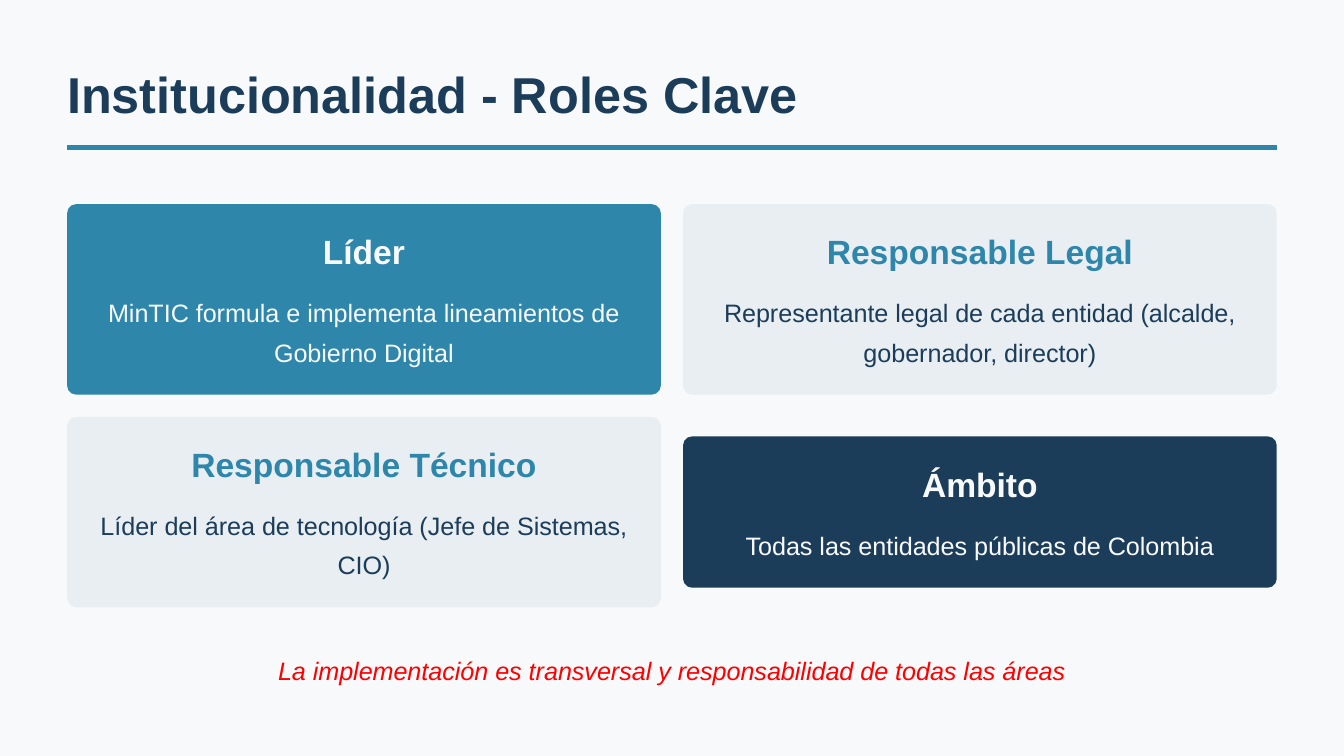
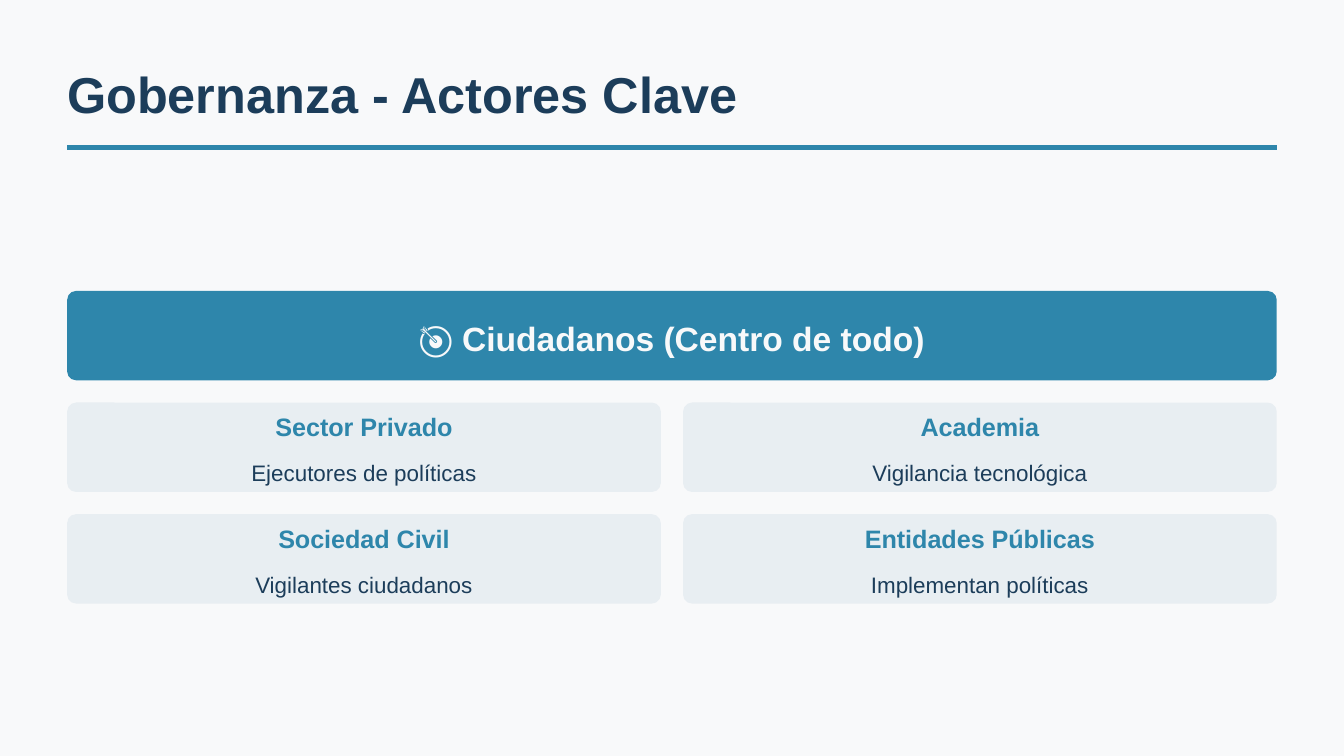
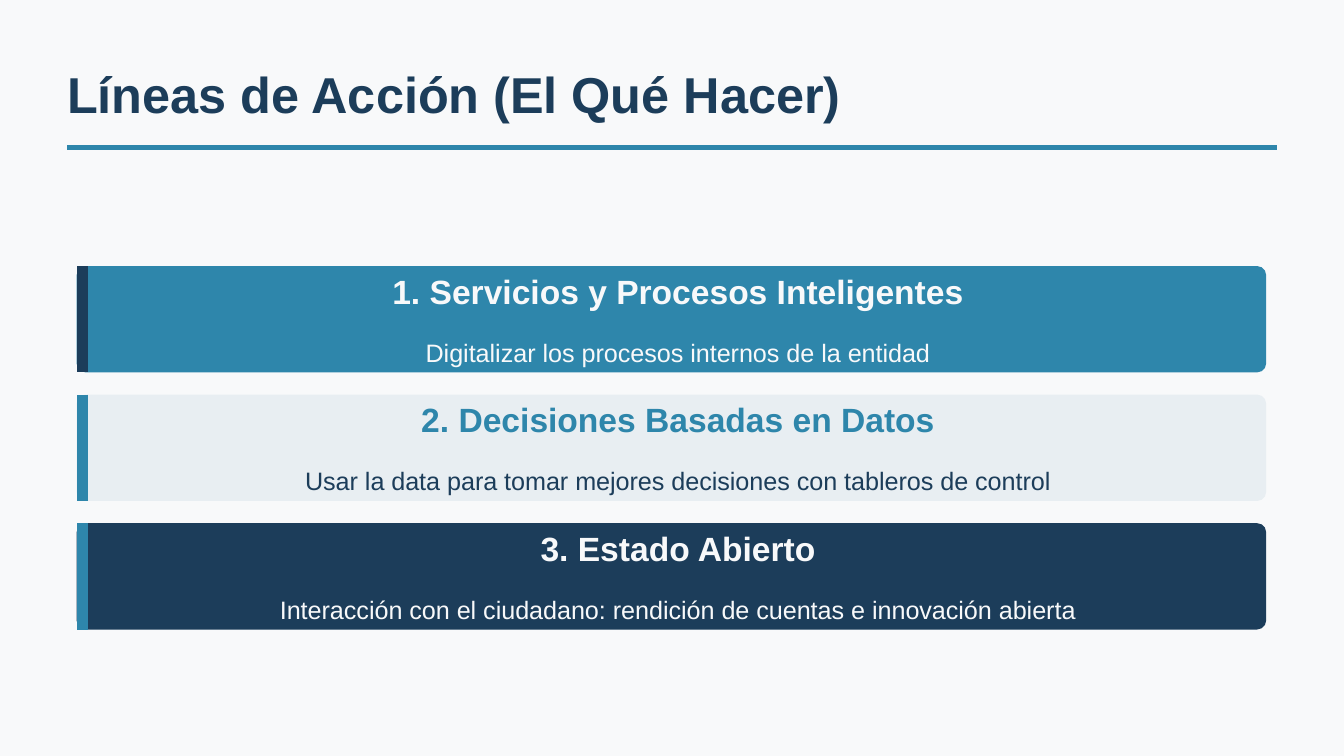
from collections import namedtuple

from lxml.etree import SubElement
from pptx import Presentation
from pptx.dml.color import RGBColor as Rgb
from pptx.enum.shapes import MSO_CONNECTOR as Connector, MSO_SHAPE as Shape
from pptx.enum.text import MSO_ANCHOR as Anchor, PP_ALIGN as Align
from pptx.oxml.ns import qn
from pptx.util import Cm, Pt

COLORS = {"paper": "F8F9FA", "blue": "2E86AB", "navy": "1C3D5A",
          "pale": "E8EEF2", "red": "FF0000"}
# Card fill -> heading colour, body colour
TONES = {"blue": ("paper", "paper"), "pale": ("blue", "navy"),
         "navy": ("paper", "paper")}
FONT = "Arial"

# Lengths in centimetres
SLIDE_W, SLIDE_H = 25.4, 14.29
MARGIN, GAP, RADIUS = 1.27, 0.42, 0.17
CONTENT_W = SLIDE_W - 2 * MARGIN
COLUMN_W = (CONTENT_W - GAP) / 2

Box = namedtuple("Box", "left top width height")
CardStyle = namedtuple(
    "CardStyle", "inset pad head_size head_line head_height head_bottom "
                 "body_size body_line line_height")
ROLE = CardStyle(0.32, 0.43, 18, 24, 1.06, 0.2, 13.5, 21, 0.74)
ACTOR = CardStyle(-0.1, 0, 13.5, 21, 0.84, 0.1, 12, 18, 0.64)
ACTION = ROLE._replace(inset=0, pad=0)


def color(name):
    return Rgb.from_string(COLORS[name])


def to_cm(box):
    return [Cm(length) for length in box]


def add_text(page, box, text, *, size, line, ink, bold=False, italic=False,
             align=Align.CENTER, space=0, top=0, bottom=0):
    frame = page.shapes.add_textbox(*to_cm(box)).text_frame
    frame.word_wrap = True
    frame.vertical_anchor = Anchor.TOP
    frame.margin_left = frame.margin_right = 0
    frame.margin_top, frame.margin_bottom = Cm(top), Cm(bottom)
    para = frame.paragraphs[0]
    para.alignment = align
    para.line_spacing = Pt(line)
    if space:
        para.space_before = para.space_after = Pt(space)
    span = para.add_run()
    span.text = text
    font = span.font
    font.name, font.size = FONT, Pt(size)
    font.bold, font.italic = bold, italic
    font.color.rgb = color(ink)


def add_line(page, start, end, ink, weight):
    line = page.shapes.add_connector(
        Connector.STRAIGHT, *to_cm(start), *to_cm(end))
    line.line.color.rgb = color(ink)
    line.line.width = Pt(weight)
    SubElement(line._element.spPr, qn("a:effectLst"))


def add_panel(page, box, fill):
    panel = page.shapes.add_shape(Shape.ROUNDED_RECTANGLE, *to_cm(box))
    panel.adjustments[0] = RADIUS / box.height
    panel.shadow.inherit = False
    panel.fill.solid()
    panel.fill.fore_color.rgb = color(fill)
    panel.line.fill.background()


def add_card_text(page, box, tone, head, body, style, lines=1):
    """Place a heading and a body of some lines inside the box."""
    head_ink, body_ink = TONES[tone]
    left, width = box.left + style.inset, box.width - 2 * style.inset
    top = box.top + style.pad
    add_text(page, Box(left, top, width, style.head_height), head,
             size=style.head_size, line=style.head_line, ink=head_ink,
             bold=True, bottom=style.head_bottom)
    add_text(page, Box(left, top + style.head_height + 0.11, width,
                       lines * style.line_height), body,
             size=style.body_size, line=style.body_line, ink=body_ink, space=3)


def grid_cell(index, top, height):
    """Return the box of a cell in a two-column grid."""
    row, column = divmod(index, 2)
    return Box(MARGIN + column * (COLUMN_W + GAP),
               top + row * (height + GAP), COLUMN_W, height)


def add_page(deck, title, title_width):
    page = deck.slides.add_slide(deck.slide_layouts[6])
    page.background.fill.solid()
    page.background.fill.fore_color.rgb = color("paper")
    # Title and rule below it
    add_line(page, (MARGIN, 2.79), (MARGIN + CONTENT_W, 2.79), "blue", 3)
    add_text(page, Box(MARGIN, 1.27, title_width, 1.06), title, size=27,
             line=30, ink="navy", bold=True, align=Align.LEFT)
    return page


def build_roles(deck):
    page = add_page(deck, "Institucionalidad - Roles Clave", 14.12)
    roles = [
        ("blue", "Líder",
         "MinTIC formula e implementa lineamientos de Gobierno Digital", 2),
        ("pale", "Responsable Legal",
         "Representante legal de cada entidad (alcalde, gobernador, director)", 2),
        ("pale", "Responsable Técnico",
         "Líder del área de tecnología (Jefe de Sistemas, CIO)", 2),
        ("navy", "Ámbito", "Todas las entidades públicas de Colombia", 1),
    ]
    for index, (tone, head, body, lines) in enumerate(roles):
        cell = grid_cell(index, 3.86, 3.6)
        # A shorter card is centred in its row
        spare = (2 - lines) * ROLE.line_height
        box = cell._replace(top=cell.top + spare / 2, height=cell.height - spare)
        add_panel(page, box, tone)
        add_card_text(page, box, tone, head, body, ROLE, lines)
    # Closing remark
    add_text(page, Box(1.04, 12.01, 23.32, 0.96),
             "La implementación es transversal y responsabilidad de todas las áreas",
             size=13.5, line=21, ink="red", italic=True, space=3, top=0.2)


def build_actors(deck):
    page = add_page(deck, "Gobernanza - Actores Clave", 12.93)
    # Central actor
    banner = Box(MARGIN, 5.5, CONTENT_W, 1.69)
    add_panel(page, banner, "blue")
    add_text(page, Box(banner.left + 0.2, banner.top + 0.42,
                       banner.width - 0.4, 0.84),
             "🎯 Ciudadanos (Centro de todo)",
             size=18, line=24, ink="paper", bold=True)
    # Surrounding actors
    actors = [("Sector Privado", "Ejecutores de políticas"),
              ("Academia", "Vigilancia tecnológica"),
              ("Sociedad Civil", "Vigilantes ciudadanos"),
              ("Entidades Públicas", "Implementan políticas")]
    for index, (head, body) in enumerate(actors):
        box = grid_cell(index, banner.top + banner.height + GAP, banner.height)
        add_panel(page, box, "pale")
        add_card_text(page, box, "pale", head, body, ACTOR)


def build_actions(deck):
    page = add_page(deck, "Líneas de Acción (El Qué Hacer)", 14.94)
    actions = [
        ("blue", "navy", "1. Servicios y Procesos Inteligentes",
         "Digitalizar los procesos internos de la entidad"),
        ("pale", "blue", "2. Decisiones Basadas en Datos",
         "Usar la data para tomar mejores decisiones con tableros de control"),
        ("navy", "blue", "3. Estado Abierto",
         "Interacción con el ciudadano: rendición de cuentas e innovación abierta"),
    ]
    height = 2.01
    for index, (tone, accent, head, body) in enumerate(actions):
        box = Box(1.45, 5.03 + index * (height + GAP), 22.48, height)
        add_panel(page, box, tone)
        # Accent bar on the left edge
        bar = box.left + 0.11
        add_line(page, (bar, box.top), (bar, box.top + height), accent, 6)
        add_card_text(page, box._replace(width=22.73), tone, head, body, ACTION)


def main():
    deck = Presentation()
    deck.slide_width, deck.slide_height = Cm(SLIDE_W), Cm(SLIDE_H)
    for build in (build_roles, build_actors, build_actions):
        build(deck)
    deck.save("out.pptx")


if __name__ == "__main__":
    main()
